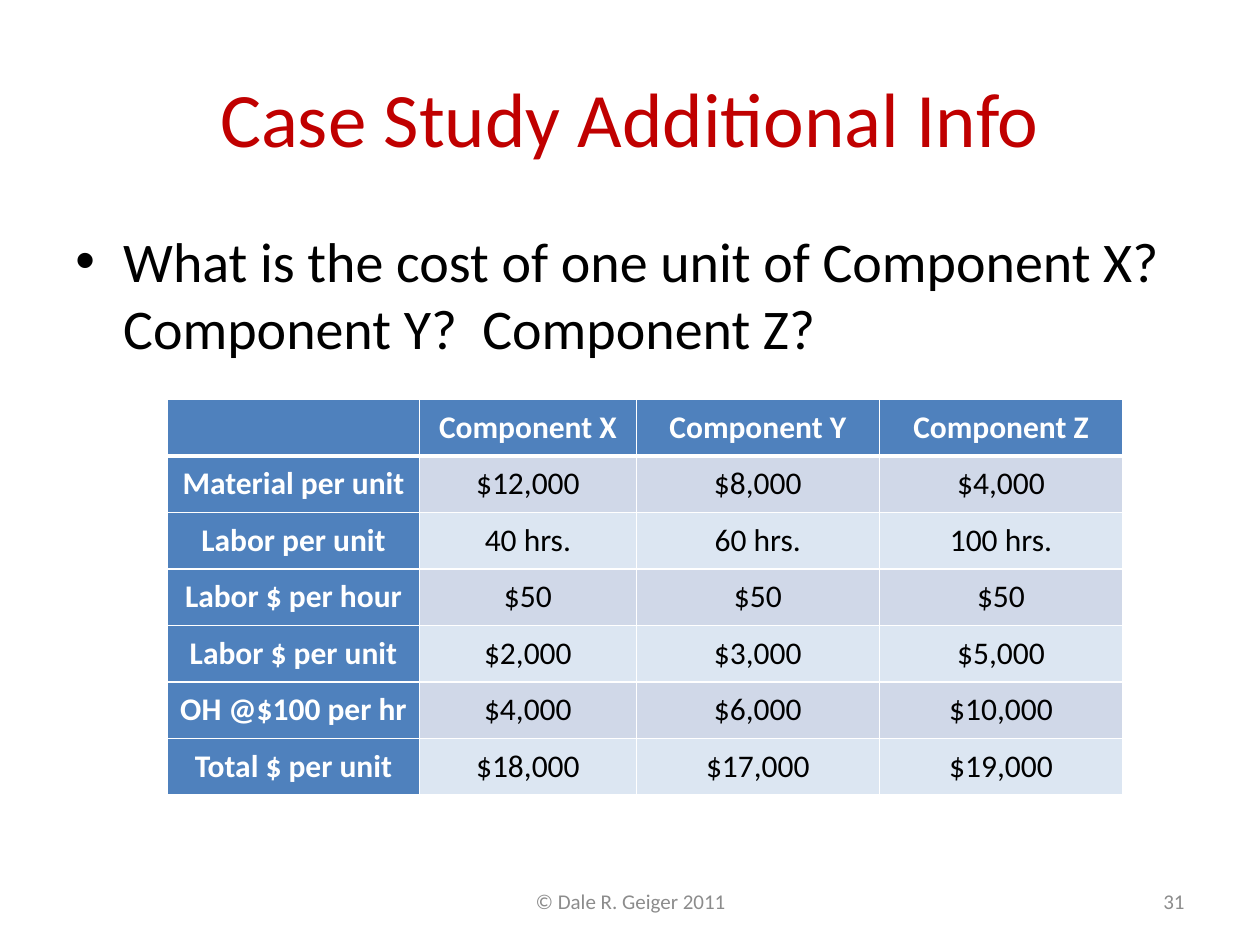
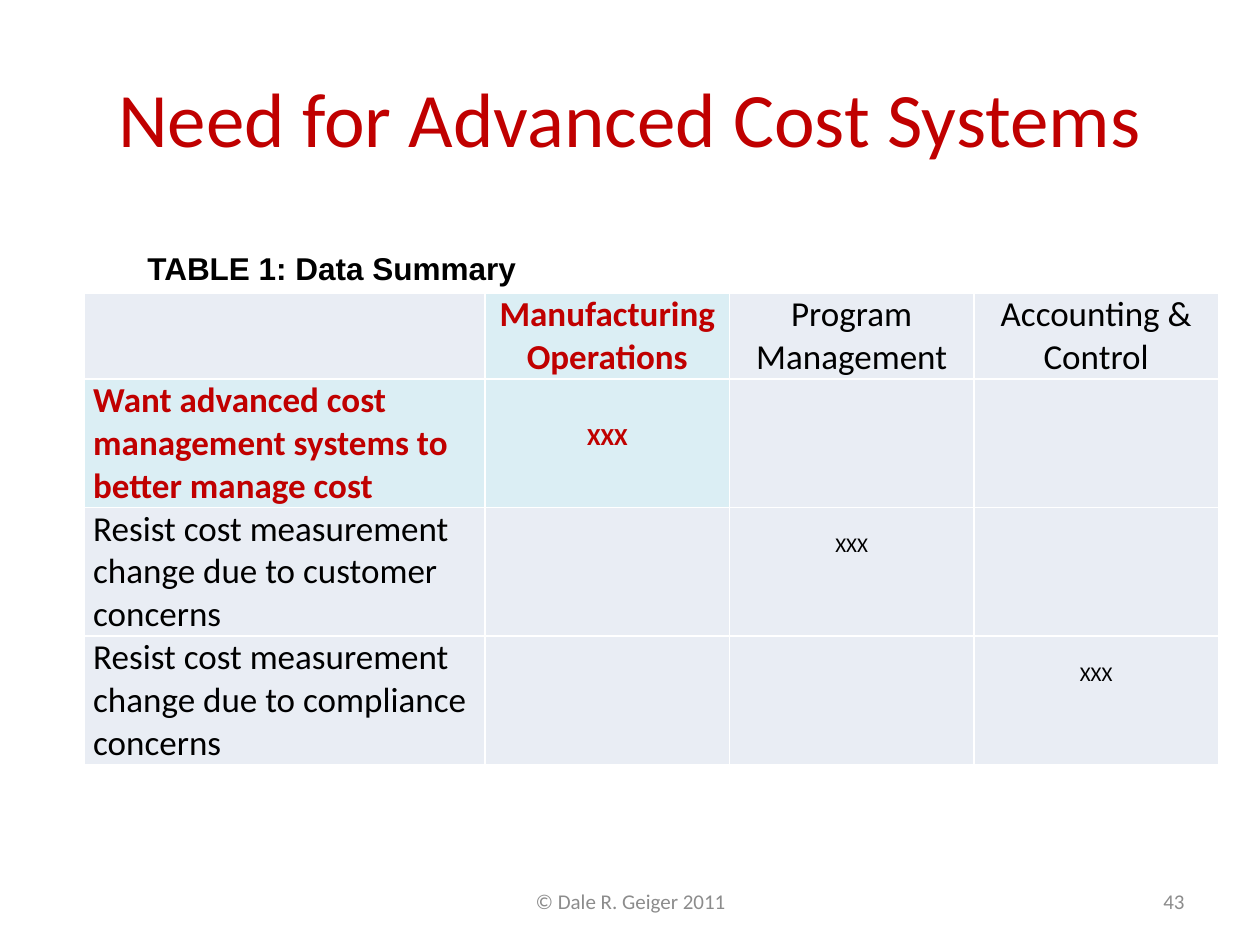
import pptx
import pptx.dml.color
import pptx.enum.text
import pptx.oxml
import pptx.oxml.ns
import pptx.util
from pptx.util import Inches

COLORS = {
    "title": "C00000",
    "text": "000000",
    "white": "FFFFFF",
    "footer": "8C8C8C",
    "header": "4F81BD",
    "band_dark": "D0D8E8",
    "band_light": "DCE6F2",
    "plain": "E9EDF4",
    "highlight": "DBEEF4",
}
ALIGN = pptx.enum.text.PP_ALIGN
ANCHOR = pptx.enum.text.MSO_ANCHOR

COSTS = [
    ["", "Component X", "Component Y", "Component Z"],
    ["Material per unit", "$12,000", "$8,000", "$4,000"],
    ["Labor per unit", "40 hrs.", "60 hrs.", "100 hrs."],
    ["Labor $ per hour", "$50", "$50", "$50"],
    ["Labor $ per unit", "$2,000", "$3,000", "$5,000"],
    ["OH @$100 per hr", "$4,000", "$6,000", "$10,000"],
    ["Total $ per unit", "$18,000", "$17,000", "$19,000"],
]
ATTITUDES = [
    ["", "Manufacturing Operations", "Program Management", "Accounting & Control"],
    ["Want advanced cost management systems to better manage cost", "XXX", "", ""],
    ["Resist cost measurement change due to customer concerns", "", "XXX", ""],
    ["Resist cost measurement change due to compliance concerns", "", "", "XXX"],
]


def rgb(name):
    return pptx.dml.color.RGBColor.from_string(COLORS[name])


def write(frame, text, size, color, align=ALIGN.LEFT, bold=False, font="Calibri"):
    """Put one styled run in the first paragraph of a text frame."""
    paragraph = frame.paragraphs[0]
    paragraph.alignment = align
    run = paragraph.add_run()
    run.text = text
    run.font.name = font
    run.font.size = pptx.util.Pt(size)
    run.font.bold = bold
    run.font.color.rgb = rgb(color)
    return paragraph


def add_text_frame(slide, left, top, width, height, anchor=ANCHOR.TOP):
    box = slide.shapes.add_textbox(
        Inches(left), Inches(top), Inches(width), Inches(height))
    frame = box.text_frame
    frame.word_wrap = True
    frame.vertical_anchor = anchor
    return frame


def add_bullet(slide, text):
    frame = add_text_frame(slide, 0.5, 1.75, 9, 1.3)
    paragraph = write(frame, text, 32, "text")
    properties = paragraph._p.get_or_add_pPr()
    properties.set("marL", str(Inches(0.38)))
    properties.set("indent", str(-Inches(0.38)))
    namespace = pptx.oxml.ns.nsdecls("a")
    for xml in (f'<a:buFont {namespace} typeface="Arial"/>',
                f'<a:buChar {namespace} char="•"/>'):
        properties.append(pptx.oxml.parse_xml(xml))


def add_caption(slide, text):
    frame = add_text_frame(slide, 1.17, 1.98, 2.95, 0.31)
    frame.word_wrap = False
    frame.margin_left = frame.margin_right = 0
    frame.margin_top = frame.margin_bottom = 0
    write(frame, text, 18, "text", bold=True, font="Arial")


def add_slide(presentation, title, number):
    """Start a slide with the shared title and footer."""
    slide = presentation.slides.add_slide(presentation.slide_layouts[6])
    frame = add_text_frame(slide, 0.5, 0.3, 9, 1.25, ANCHOR.MIDDLE)
    write(frame, title, 44, "title", ALIGN.CENTER)
    frame = add_text_frame(slide, 3.42, 6.95, 3.17, 0.4, ANCHOR.MIDDLE)
    write(frame, "© Dale R. Geiger 2011", 12, "footer", ALIGN.CENTER)
    frame = add_text_frame(slide, 7.17, 6.95, 2.33, 0.4, ANCHOR.MIDDLE)
    write(frame, str(number), 12, "footer", ALIGN.RIGHT)
    return slide


def set_borders(cell, top=1, bottom=1):
    properties = cell._tc.get_or_add_tcPr()
    for side, points in (("L", 1), ("R", 1), ("T", top), ("B", bottom)):
        properties.append(pptx.oxml.parse_xml(
            f'<a:ln{side} {pptx.oxml.ns.nsdecls("a")} w="{pptx.util.Pt(points)}">'
            f'<a:solidFill><a:srgbClr val="{COLORS["white"]}"/></a:solidFill>'
            f'</a:ln{side}>'))


def add_table(slide, rows, left, top, widths, heights, style_cell, header_line=1):
    """Draw a grid; style_cell(cell, row, column, text) fills and writes each cell."""
    table = slide.shapes.add_table(
        len(rows), len(widths), Inches(left), Inches(top),
        Inches(sum(widths)), Inches(sum(heights))).table
    table.first_row = table.horz_banding = False
    for column, width in zip(table.columns, widths):
        column.width = Inches(width)
    for row, height in zip(table.rows, heights):
        row.height = Inches(height)
    for row, texts in enumerate(rows):
        for column, text in enumerate(texts):
            cell = table.cell(row, column)
            cell.margin_left = cell.margin_right = Inches(0.07)
            cell.margin_top = cell.margin_bottom = 0
            set_borders(cell, top=header_line if row == 1 else 1,
                        bottom=header_line if row == 0 else 1)
            cell.fill.solid()
            style_cell(cell, row, column, text)


def style_cost(cell, row, column, text):
    heading = row == 0 or column == 0
    band = "band_dark" if row % 2 else "band_light"
    cell.fill.fore_color.rgb = rgb("header" if heading else band)
    cell.vertical_anchor = ANCHOR.MIDDLE
    if text:
        write(cell.text_frame, text, 18, "white" if heading else "text",
              ALIGN.CENTER, bold=heading)


def style_attitude(cell, row, column, text):
    # The manufacturing column and its answer stand out
    highlighted = (row, column) in ((0, 1), (1, 0), (1, 1))
    cell.fill.fore_color.rgb = rgb("highlight" if highlighted else "plain")
    size = 20
    if text == "XXX":
        size = 14 if highlighted else 12
        cell.margin_top = Inches(0.34 if highlighted else 0.2)
    if text:
        write(cell.text_frame, text, size, "title" if highlighted else "text",
              ALIGN.CENTER if column else ALIGN.LEFT, bold=highlighted)


def main():
    presentation = pptx.Presentation()
    presentation.slide_width = Inches(10)
    presentation.slide_height = Inches(7.5)

    # Unit costs of the three components
    slide = add_slide(presentation, "Case Study Additional Info", 31)
    add_bullet(slide, "What is the cost of one unit of Component X? "
                      "Component Y?  Component Z?")
    add_table(slide, COSTS, 1.33, 3.17, [2, 1.72, 1.93, 1.93],
              [3.14 / len(COSTS)] * len(COSTS), style_cost, header_line=3)

    # Who wants advanced cost systems
    slide = add_slide(presentation, "Need for Advanced Cost Systems", 43)
    add_table(slide, ATTITUDES, 0.67, 2.33, [3.18] + [1.94] * 3,
              [0.68] + [1.02] * 3, style_attitude)
    add_caption(slide, "TABLE 1: Data Summary")

    presentation.save("out.pptx")


if __name__ == "__main__":
    main()
